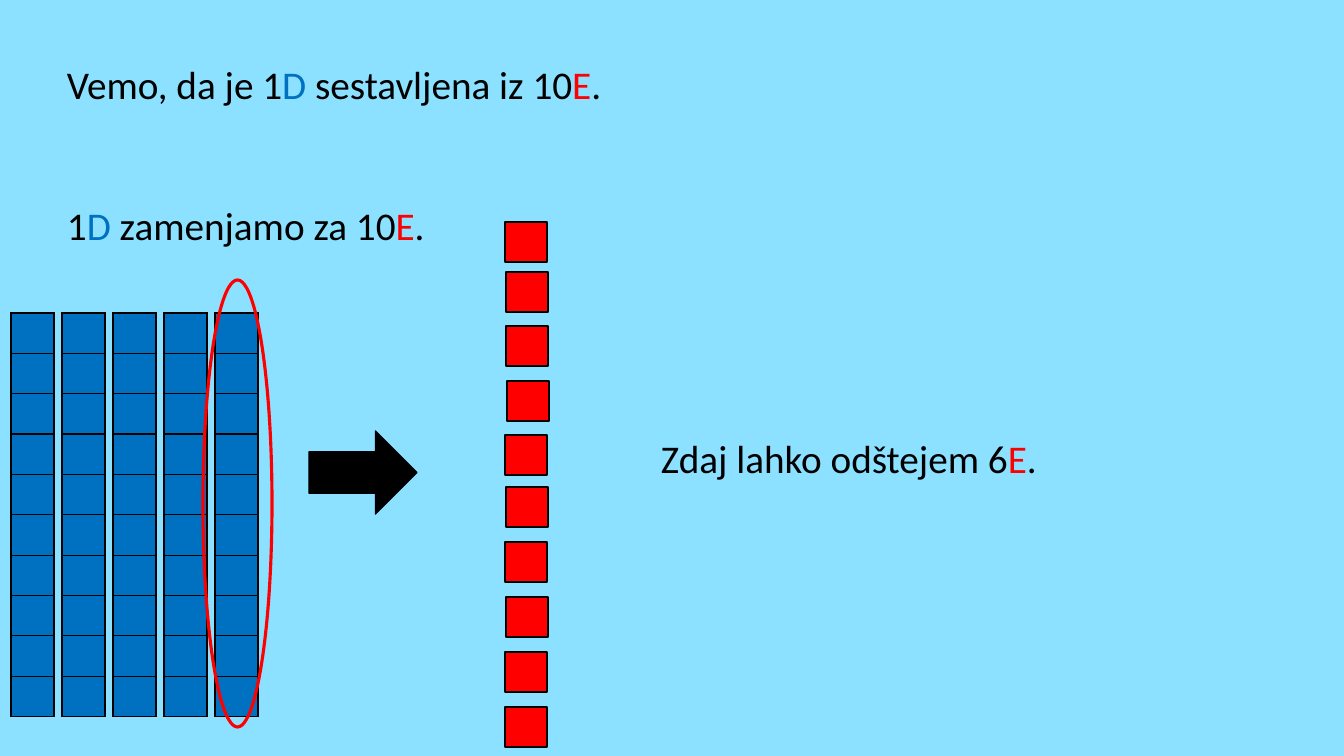
from itertools import groupby

from lxml import etree
from pptx import Presentation
from pptx import util as u
from pptx.dml.color import RGBColor
from pptx.enum import shapes
from pptx.oxml.ns import qn

BLACK, BLUE, RED, SKY = "000000", "0070C0", "FF0000", "8BE1FF"
UNITS = {"D": BLUE, "E": RED}
TOPS = [222, 272, 326, 381, 435, 487, 542, 597, 652, 707]
LEFTS = [505, 506, 506, 507, 505, 506, 505, 506, 505, 505]


def px(n):
    return u.Emu(round(n * 914400 / 100.8))


def paint(fill, color):
    fill.solid()
    fill.fore_color.rgb = RGBColor.from_string(color)


class Board:
    font, size = "Calibri", u.Pt(28)
    kind = shapes.MSO_SHAPE

    def __init__(self, deck):
        self.slide = deck.slides.add_slide(deck.slide_layouts[6])
        paint(self.slide.background.fill, SKY)

    def text(self, x, y, words):
        frame = self.slide.shapes.add_textbox(px(x), px(y), px(720), px(110)).text_frame
        frame.word_wrap = True
        para = frame.paragraphs[0]
        para.line_spacing = 0.9
        para.font.name, para.font.size = self.font, self.size
        for color, part in groupby(words, lambda c: UNITS.get(c, BLACK)):
            run = para.add_run()
            run.text = "".join(part)
            run.font.color.rgb = RGBColor.from_string(color)

    def shape(self, kind, x, y, w, h, fill, line=BLACK, width=1):
        item = self.slide.shapes.add_shape(kind, px(x), px(y), px(w), px(h))
        item.shadow.inherit = False
        if fill:
            paint(item.fill, fill)
        else:
            item.fill.background()
        paint(item.line.fill, line)
        item.line.width = u.Pt(width)

    def border(self, cell):
        props = cell._tc.get_or_add_tcPr()
        for side in ("lnL", "lnR", "lnT", "lnB"):
            line = etree.SubElement(props, qn("a:" + side), w=str(u.Pt(1)))
            solid = etree.SubElement(line, qn("a:solidFill"))
            etree.SubElement(solid, qn("a:srgbClr"), val=BLACK)

    def rod(self, x, y):
        table = self.slide.shapes.add_table(10, 1, px(x), px(y), px(43), px(400)).table
        table.first_row = table.horz_banding = False
        for row in table.rows:
            row.height = px(40)
            cell = row.cells[0]
            self.border(cell)
            paint(cell.fill, BLUE)


def main():
    deck = Presentation()
    deck.slide_width, deck.slide_height = px(1344), px(756)
    board = Board(deck)
    board.text(57, 61, "Vemo, da je 1D sestavljena iz 10E.")
    board.text(57, 202, "1D zamenjamo za 10E.")
    board.shape(board.kind.RIGHT_ARROW, 309, 431, 108, 83, BLACK)
    for x, y in zip(LEFTS, TOPS):
        board.shape(board.kind.RECTANGLE, x, y, 42, 40, RED)
    for i in range(5):
        board.rod(11 + 51 * i, 313)
    board.shape(board.kind.OVAL, 203, 280, 69, 447, None, RED, 2.25)
    board.text(651, 435, "Zdaj lahko odštejem 6E.")
    deck.save("out.pptx")


if __name__ == "__main__":
    main()
